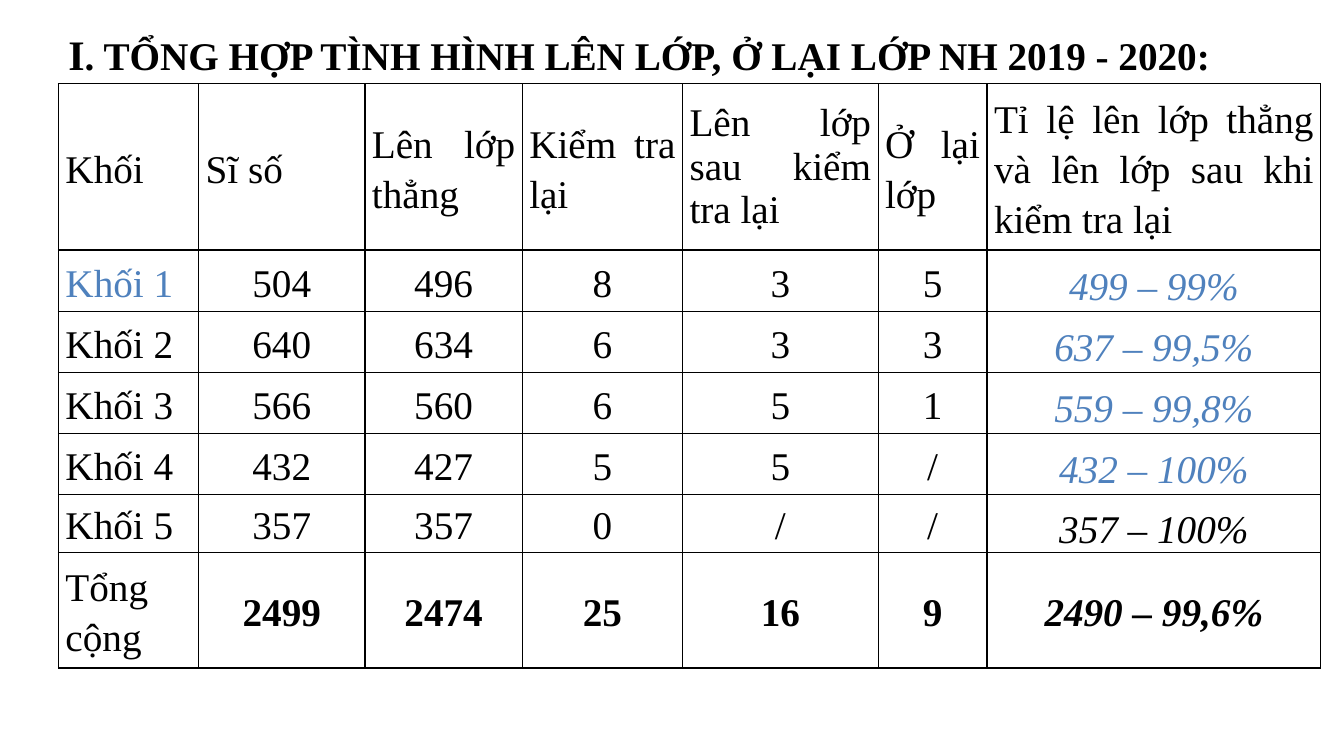
from lxml import etree
from pptx import Presentation
from pptx.dml.color import RGBColor
from pptx.enum.text import MSO_ANCHOR, MSO_AUTO_SIZE, PP_ALIGN
from pptx.oxml.ns import qn
from pptx.util import Inches, Pt

MIDDLE, BOTTOM = MSO_ANCHOR.MIDDLE, MSO_ANCHOR.BOTTOM
CENTER, JUSTIFY = PP_ALIGN.CENTER, PP_ALIGN.JUSTIFY
GROW = MSO_AUTO_SIZE.SHAPE_TO_FIT_TEXT

COLORS = {"ink": "000000", "blue": "4F81BD"}
FONT = "Times New Roman"
SIZE = 28
WIDE, HIGH = Inches(13.33), Inches(7.5)

TITLE = [("I", 30), (". TỔNG HỢP TÌNH HÌNH LÊN LỚP, Ở LẠI LỚP NH 2019 - 2020:", SIZE)]
COLS = [1.39, 1.65, 1.56, 1.59, 1.94, 1.08, 3.31]
ROWS = [1.65, 0.59, 0.59, 0.59, 0.59, 0.57, 1.15]
DATA = [
    ["Khối", "Sĩ số", "Lên lớp thẳng", "Kiểm tra lại", "Lên lớp sau kiểm tra lại",
     "Ở lại lớp", "Tỉ lệ lên lớp thẳng và lên lớp sau khi kiểm tra lại"],
    ["Khối 1", "504", "496", "8", "3", "5", "499 – 99%"],
    ["Khối 2", "640", "634", "6", "3", "3", "637 – 99,5%"],
    ["Khối 3", "566", "560", "6", "5", "1", "559 – 99,8%"],
    ["Khối 4", "432", "427", "5", "5", "/", "432 – 100%"],
    ["Khối 5", "357", "357", "0", "/", "/", "357 – 100%"],
    ["Tổng cộng", "2499", "2474", "25", "16", "9", "2490 – 99,6%"],
]
TOTAL, RATE, AFTER = len(ROWS) - 1, len(COLS) - 1, 4


def style(run, size=SIZE, color="ink", bold=False, italic=False):
    font = run.font
    font.name, font.size = FONT, Pt(size)
    font.bold, font.italic = bold, italic
    font.color.rgb = RGBColor.from_string(COLORS[color])


def border(cell):
    props = cell._tc.get_or_add_tcPr()
    for spot, side in enumerate(("lnL", "lnR", "lnT", "lnB")):
        line = etree.Element(qn(f"a:{side}"), w=str(Pt(1)))
        fill = etree.SubElement(line, qn("a:solidFill"))
        etree.SubElement(fill, qn("a:srgbClr"), val=COLORS["ink"])
        props.insert(spot, line)


def fill_cell(cell, text, row, col):
    head, first, rate = row == 0, col == 0, row > 0 and col == RATE
    early = rate and row < TOTAL - 1
    blue = early or (row == 1 and first)
    cell.fill.background()
    border(cell)
    cell.margin_left = cell.margin_right = Inches(0.07)
    cell.margin_top = cell.margin_bottom = 0
    cell.vertical_anchor = BOTTOM if rate and row == TOTAL - 1 else MIDDLE
    cell.text_frame.text = text
    para = cell.text_frame.paragraphs[0]
    para.alignment = JUSTIFY if head or first else CENTER
    para.line_spacing = 1.3 if early else 1.0 if head and col == AFTER else 1.15
    if blue:
        para.space_before = Pt(10)
    elif not head and not first:
        para.space_after = Pt(10)
    style(para.runs[0], color="blue" if blue else "ink",
          bold=row == TOTAL and not first, italic=rate)


def add_title(slide, left, top, width, height):
    frame = slide.shapes.add_textbox(left, top, width, height).text_frame
    frame.word_wrap = True
    frame.auto_size = GROW
    for text, size in TITLE:
        run = frame.paragraphs[0].add_run()
        run.text = text
        style(run, size, bold=True)


def add_grid(slide, left, top, width, height):
    table = slide.shapes.add_table(len(ROWS), len(COLS), left, top, width, height).table
    table.first_row = table.horz_banding = False
    for col, share in zip(table.columns, COLS):
        col.width = int(width * share / sum(COLS))
    for row, share in zip(table.rows, ROWS):
        row.height = int(height * share / sum(ROWS))
    for row, texts in enumerate(DATA):
        for col, text in enumerate(texts):
            fill_cell(table.cell(row, col), text, row, col)


def main():
    deck = Presentation()
    deck.slide_width, deck.slide_height = WIDE, HIGH
    slide = deck.slides.add_slide(deck.slide_layouts[6])
    left = Inches(0.58)
    add_title(slide, left, Inches(0.23), Inches(12.37), Inches(0.61))
    add_grid(slide, left, Inches(0.83), Inches(sum(COLS)), Inches(sum(ROWS)))
    deck.save("out.pptx")


if __name__ == "__main__":
    main()
